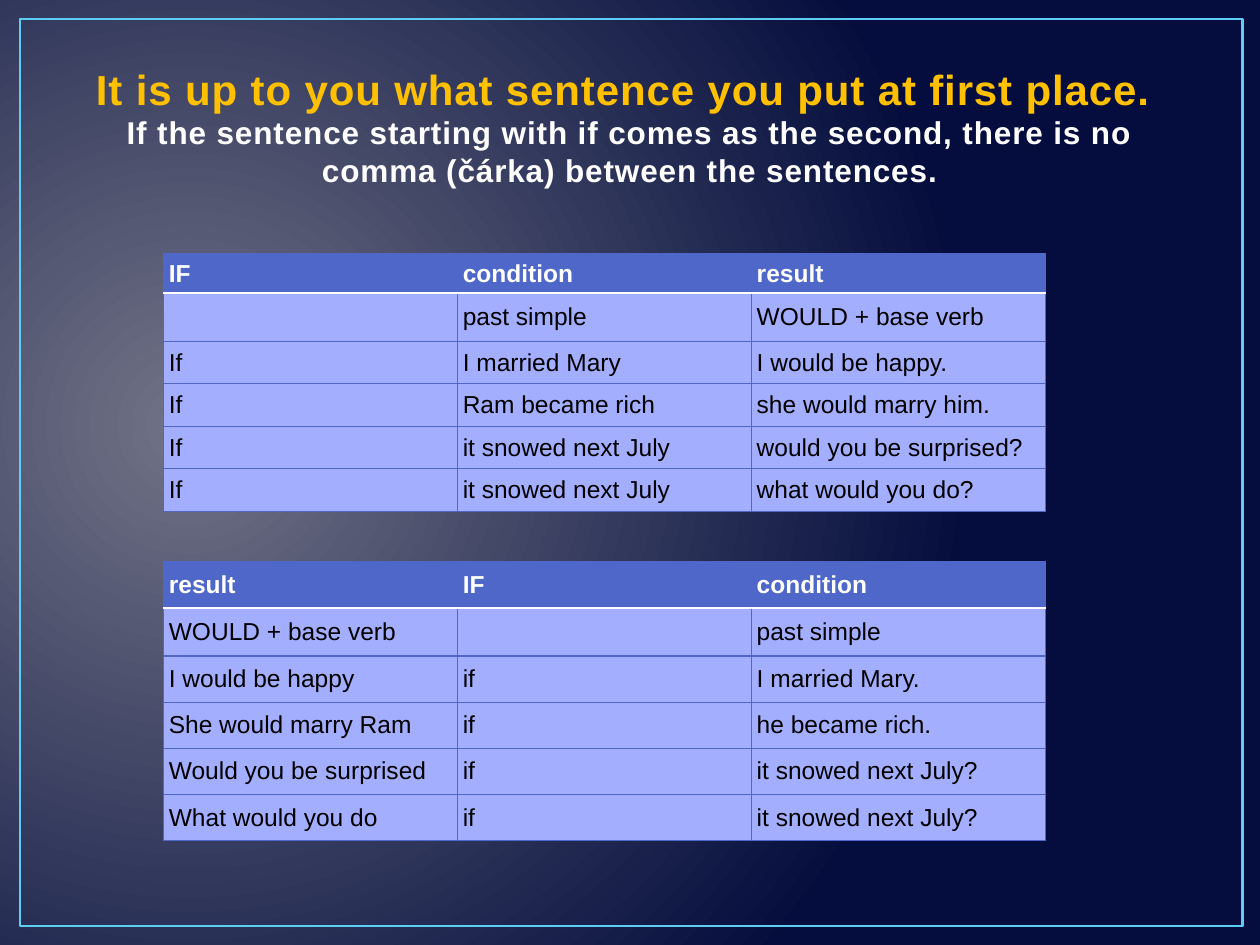
from lxml import etree
from pptx import Presentation
from pptx.dml.color import RGBColor
from pptx.enum.shapes import MSO_SHAPE
from pptx.enum.text import MSO_ANCHOR, PP_ALIGN
from pptx.oxml.ns import qn
from pptx.util import Inches, Pt

RECTANGLE = MSO_SHAPE.RECTANGLE
BOTTOM, MIDDLE = MSO_ANCHOR.BOTTOM, MSO_ANCHOR.MIDDLE
CENTER, LEFT = PP_ALIGN.CENTER, PP_ALIGN.LEFT

COLORS = {
    "glow": "717386",
    "night": "040D3D",
    "frame": "5ECCF3",
    "headline": "FFC000",
    "rule": "FFFEFE",
    "header": "4E67C8",
    "header_text": "FFFFFF",
    "body": "A3AEFF",
    "body_text": "000000",
}
WIDTH, HEIGHT = 10, 7.5
CELL_INSET = Inches(0.04)

CONDITION_FIRST = [
    ("IF", "condition", "result"),
    ("", "past simple", "WOULD + base verb"),
    ("If", "I married Mary", "I would be happy."),
    ("If", "Ram became rich", "she would marry him."),
    ("If", "it snowed next July", "would you be surprised?"),
    ("If", "it snowed next July", "what would you do?"),
]
RESULT_FIRST = [
    ("result", "IF", "condition"),
    ("WOULD + base verb", "", "past simple"),
    ("I would be happy", "if", "I married Mary."),
    ("She would marry Ram", "if", "he became rich."),
    ("Would you be surprised", "if", "it snowed next July?"),
    ("What would you do", "if", "it snowed next July?"),
]


def rgb(name):
    return RGBColor.from_string(COLORS[name])


def write(paragraph, text, *, size, color, bold=False, align=LEFT, spacing=0):
    paragraph.alignment = align
    run = paragraph.add_run()
    run.text = text
    run.font.name = "Arial"
    run.font.size = Pt(size)
    run.font.bold = bold
    run.font.color.rgb = rgb(color)
    if spacing:
        run._r.get_or_add_rPr().set("spc", str(int(spacing * 100)))


def paint_background(slide):
    fill = slide.background.fill
    fill.gradient()
    for stop, color in zip(fill.gradient_stops, ("glow", "night")):
        stop.color.rgb = rgb(color)
    gradient = next(slide.element.iter(qn("a:gradFill")))
    gradient.remove(gradient.find(qn("a:lin")))
    circle = etree.SubElement(gradient, qn("a:path"), path="circle")
    etree.SubElement(circle, qn("a:fillToRect"),
                     l="15000", t="50000", r="85000", b="60000")


def draw_frame(slide, box):
    frame = slide.shapes.add_shape(RECTANGLE, *map(Inches, box))
    frame.shadow.inherit = False
    frame.fill.background()
    frame.line.color.rgb = rgb("frame")
    frame.line.width = Pt(1.5)


def draw_heading(slide, box):
    heading = slide.shapes.add_textbox(*map(Inches, box)).text_frame
    heading.word_wrap = True
    heading.vertical_anchor = BOTTOM
    paragraph = heading.paragraphs[0]
    style = dict(bold=True, align=CENTER, spacing=0.5)
    write(paragraph, "It is up to you what sentence you put at first place. ",
          size=24, color="headline", **style)
    paragraph.add_line_break()
    write(paragraph, "If the sentence starting with if comes as the second, "
          "there is no comma (čárka) between the sentences.",
          size=18, color="rule", **style)


def set_borders(cell, **sides):
    properties = cell._tc.get_or_add_tcPr()
    for index, side in enumerate("LRTB"):
        color, points = sides.get(side, ("header", 0.75))
        line = etree.Element(qn(f"a:ln{side}"), w=str(Pt(points)))
        solid = etree.SubElement(line, qn("a:solidFill"))
        etree.SubElement(solid, qn("a:srgbClr"), val=COLORS[color])
        properties.insert(index, line)


def draw_grammar_table(slide, box, sentences, header_height):
    left, top, width, height = box
    row_count, column_count = len(sentences), len(sentences[0])
    table = slide.shapes.add_table(row_count, column_count,
                                   *map(Inches, box)).table
    body_height = (height - header_height) / (row_count - 1)
    for column in table.columns:
        column.width = Inches(width / column_count)
    divider = ("header_text", 1.25)
    for row, texts in enumerate(sentences):
        is_header = row == 0
        part = "header" if is_header else "body"
        table.rows[row].height = Inches(header_height if is_header else body_height)
        sides = {0: {"B": divider}, 1: {"T": divider}}.get(row, {})
        for column, text in enumerate(texts):
            cell = table.cell(row, column)
            cell.vertical_anchor = MIDDLE
            cell.margin_left = cell.margin_right = CELL_INSET
            cell.margin_top = cell.margin_bottom = CELL_INSET
            cell.fill.solid()
            cell.fill.fore_color.rgb = rgb(part)
            set_borders(cell, **sides)
            if text:
                write(cell.text_frame.paragraphs[0], text, size=14,
                      color=f"{part}_text", bold=is_header)


def main():
    deck = Presentation()
    deck.slide_width, deck.slide_height = Inches(WIDTH), Inches(HEIGHT)
    slide = deck.slides.add_slide(deck.slide_layouts[6])
    paint_background(slide)
    draw_frame(slide, (0.016 * WIDTH, 0.02 * HEIGHT, 0.97 * WIDTH, 0.96 * HEIGHT))
    draw_heading(slide, (0.05 * WIDTH, 0.04 * HEIGHT, 0.9 * WIDTH, HEIGHT / 6))
    table_left, table_width = 0.13 * WIDTH, 0.7 * WIDTH
    draw_grammar_table(slide, (table_left, 0.27 * HEIGHT - 0.01, table_width, 1.99),
                       CONDITION_FIRST, header_height=0.3)
    draw_grammar_table(slide, (table_left, 4.46, table_width, 2.2),
                       RESULT_FIRST, header_height=2.2 / len(RESULT_FIRST))
    deck.save("out.pptx")


if __name__ == "__main__":
    main()
